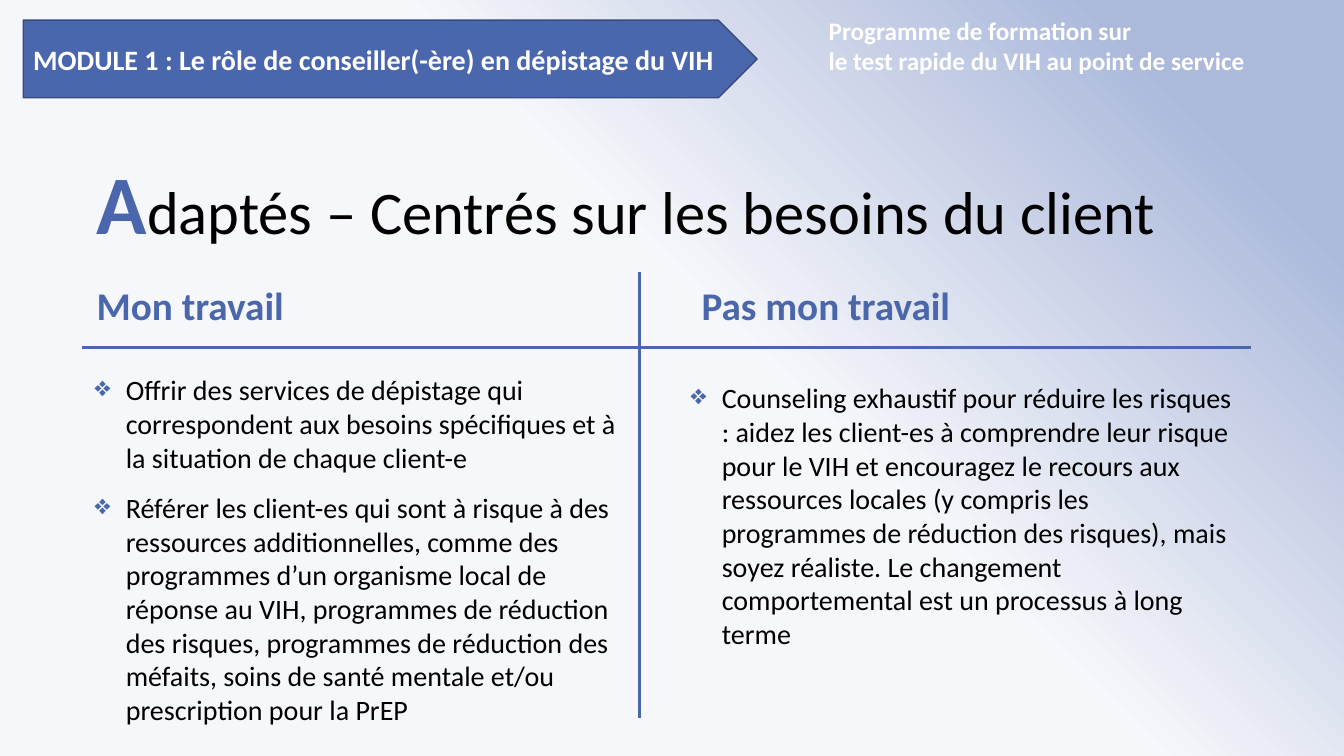
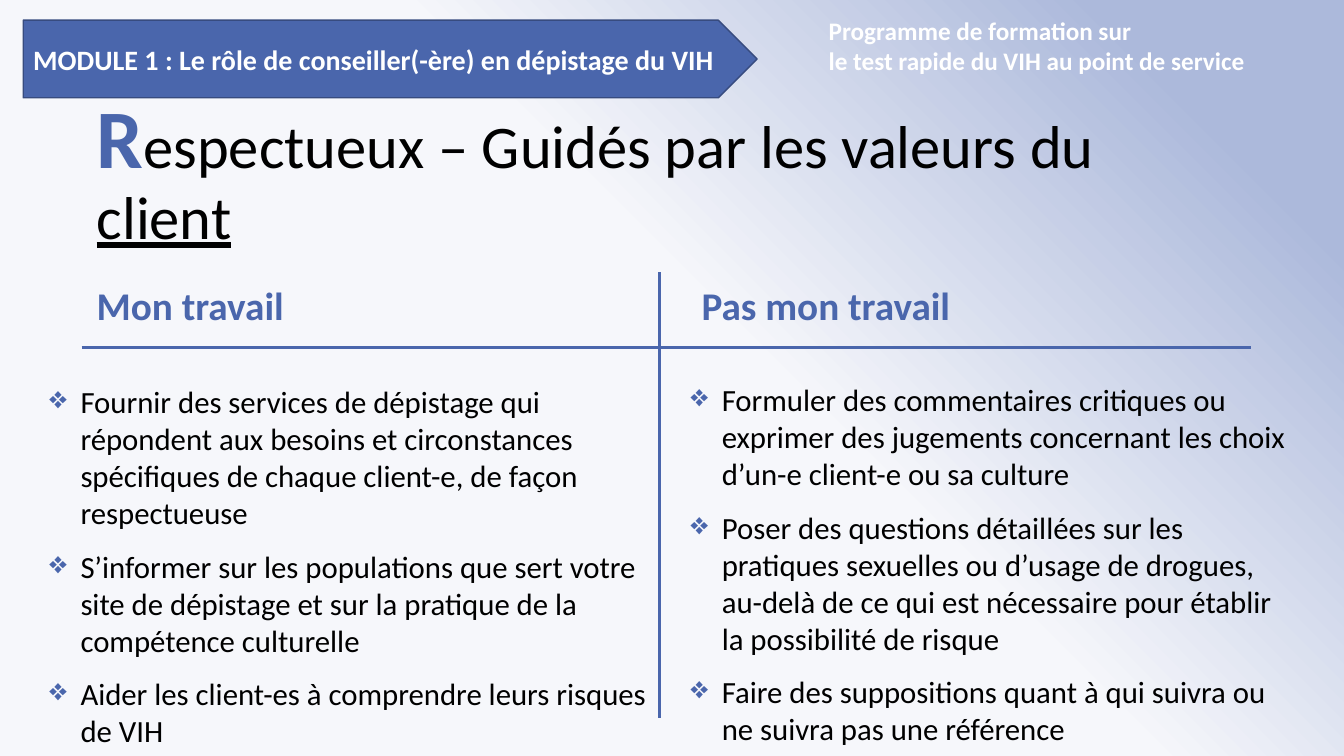
from lxml import etree
from pptx import Presentation
from pptx import util as u
from pptx.dml.color import RGBColor
from pptx.enum import shapes, text
from pptx.oxml import ns

WIDTH, HEIGHT = u.Inches(13.33), u.Inches(7.5)
FONT = "Calibri"
BLUE, NAVY, WHITE, BLACK = "4A66AC", "374B7F", "FFFFFF", "000000"
GRADIENT = [(55, "F6F7FB"), (88, "ACB9DB"), (100, "ACB9DB"), (100, "C8D1E7")]
INDENT = u.Inches(0.31)
BODY_WIDTH = 86.12
RULE_TOP = 46
DIVIDER_TOP, DIVIDER_BOTTOM = 36, 95
MODULE = "MODULE 1 : Le rôle de conseiller(-ère) en dépistage du VIH"
PROGRAMME = "Programme de formation sur\vle test rapide du VIH au point de service"
HEADINGS = [(6.45, "Mon travail"), (51.46, "Pas mon travail")]

PAGES = [
    {
        "title": ("A", "daptés – Centrés sur les besoins du client", ""),
        "divider": 47.56,
        "size": 20,
        "columns": [
            ((6.3, 48.67, 41.19, 48.53), [
                "Offrir des services de dépistage qui correspondent aux besoins "
                "spécifiques et à la situation de chaque client-e",
                "Référer les client-es qui sont à risque à des ressources "
                "additionnelles, comme des programmes d’un organisme local de "
                "réponse au VIH, programmes de réduction des risques, programmes "
                "de réduction des méfaits, soins de santé mentale et/ou "
                "prescription pour la PrEP",
            ]),
            ((50.64, 49.73, 41.79, 37.2), [
                "Counseling exhaustif pour réduire les risques : aidez les "
                "client-es à comprendre leur risque pour le VIH et encouragez le "
                "recours aux ressources locales (y compris les programmes de "
                "réduction des risques), mais soyez réaliste. Le changement "
                "comportemental est un processus à long terme",
            ]),
        ],
    },
    {
        "title": ("R", "espectueux – Guidés par les valeurs du ", "client"),
        "divider": 49.06,
        "size": 22,
        "columns": [
            ((2.93, 50, 47.19, 50), [
                "Fournir des services de dépistage qui répondent aux besoins et "
                "circonstances spécifiques de chaque client-e, de façon "
                "respectueuse",
                "S’informer sur les populations que sert votre site de dépistage "
                "et sur la pratique de la compétence culturelle",
                "Aider les client-es à comprendre leurs risques de VIH",
            ]),
            ((50.64, 49.73, 45.84, 50.27), [
                "Formuler des commentaires critiques ou exprimer des jugements "
                "concernant les choix d’un-e client-e ou sa culture",
                "Poser des questions détaillées sur les pratiques sexuelles ou "
                "d’usage de drogues, au-delà de ce qui est nécessaire pour établir "
                "la possibilité de risque",
                "Faire des suppositions quant à qui suivra ou ne suivra pas une "
                "référence",
            ]),
        ],
    },
]


def color(value):
    return RGBColor.from_string(value)


def across(share):
    return round(WIDTH * share / 100)


def down(share):
    return round(HEIGHT * share / 100)


def place(left, top, width, height):
    return across(left), down(top), across(width), down(height)


def style(font, size, tint, bold=False):
    font.name = FONT
    font.size = u.Pt(size)
    font.bold = bold
    font.color.rgb = color(tint)


def paint_background(master):
    fill = master.background.fill
    fill.gradient()
    fill.gradient_angle = 45
    stops = master.element.find(".//" + ns.qn("a:gsLst"))
    for stop in list(stops):
        stops.remove(stop)
    for position, tint in GRADIENT:
        stop = etree.SubElement(stops, ns.qn("a:gs"), pos=str(position * 1000))
        etree.SubElement(stop, ns.qn("a:srgbClr"), val=tint)


def add_box(page, area):
    box = page.shapes.add_textbox(*place(*area))
    box.text_frame.word_wrap = True
    return box.text_frame


def add_label(page, area, words, size, tint):
    para = add_box(page, area).paragraphs[0]
    para.text = words
    style(para.font, size, tint, True)
    return para


def add_title(page, initial, rest, underlined):
    frame = add_box(page, (6.45, 22.93, BODY_WIDTH, 11.07))
    frame.vertical_anchor = text.MSO_ANCHOR.BOTTOM
    para = frame.paragraphs[0]
    para.line_spacing = 0.9
    style(para.font, 43.2, BLACK)
    for words in filter(None, (initial, rest, underlined)):
        span = para.add_run()
        span.text = words
        if words == initial:
            style(span.font, 59.4, BLUE, True)
        elif words == underlined:
            span.font.underline = True


def add_rule(page, start, end):
    rule = page.shapes.add_connector(
        shapes.MSO_CONNECTOR.STRAIGHT,
        across(start[0]), down(start[1]), across(end[0]), down(end[1]))
    rule.line.color.rgb = color(BLUE)
    rule.line.width = u.Pt(2.25)
    etree.SubElement(rule.element.spPr, ns.qn("a:effectLst"))


def add_bullet(para):
    properties = para._p.get_or_add_pPr()
    properties.set("marL", str(INDENT))
    properties.set("indent", str(-INDENT))
    tint = etree.SubElement(properties, ns.qn("a:buClr"))
    etree.SubElement(tint, ns.qn("a:srgbClr"), val=BLUE)
    etree.SubElement(properties, ns.qn("a:buChar"), char="❖")


def add_list(page, area, items, size):
    frame = add_box(page, area)
    for index, item in enumerate(items):
        para = frame.add_paragraph() if index else frame.paragraphs[0]
        para.text = item
        add_bullet(para)
        para.space_after = u.Pt(12)
        style(para.font, size, BLACK)


def add_banner(page):
    banner = page.shapes.add_shape(
        shapes.MSO_SHAPE.PENTAGON, *place(1.73, 2.67, 54.61, 10.27))
    banner.shadow.inherit = False
    banner.fill.solid()
    banner.fill.fore_color.rgb = color(BLUE)
    banner.line.color.rgb = color(NAVY)
    banner.line.width = u.Pt(1)
    frame = banner.text_frame
    frame.word_wrap = True
    frame.vertical_anchor = text.MSO_ANCHOR.MIDDLE
    para = frame.paragraphs[0]
    para.text = MODULE
    para.alignment = text.PP_ALIGN.LEFT
    style(para.font, 20, WHITE, True)


def add_page(deck, content):
    page = deck.slides.add_slide(deck.slide_layouts[6])
    add_label(page, (60.92, 1.33, 39.08, 10), PROGRAMME, 18, WHITE)
    add_title(page, *content["title"])
    for left, heading in HEADINGS:
        para = add_label(page, (left, 37.2, 40, 8), heading, 28, BLUE)
        para.line_spacing = 0.9
    divider = content["divider"]
    add_rule(page, (divider, DIVIDER_TOP), (divider, DIVIDER_BOTTOM))
    add_rule(page, (6.08, RULE_TOP), (93.1, RULE_TOP))
    for area, items in content["columns"]:
        add_list(page, area, items, content["size"])
    add_banner(page)


def main():
    deck = Presentation()
    deck.slide_width, deck.slide_height = WIDTH, HEIGHT
    paint_background(deck.slide_master)
    for content in PAGES:
        add_page(deck, content)
    deck.save("out.pptx")


if __name__ == "__main__":
    main()
